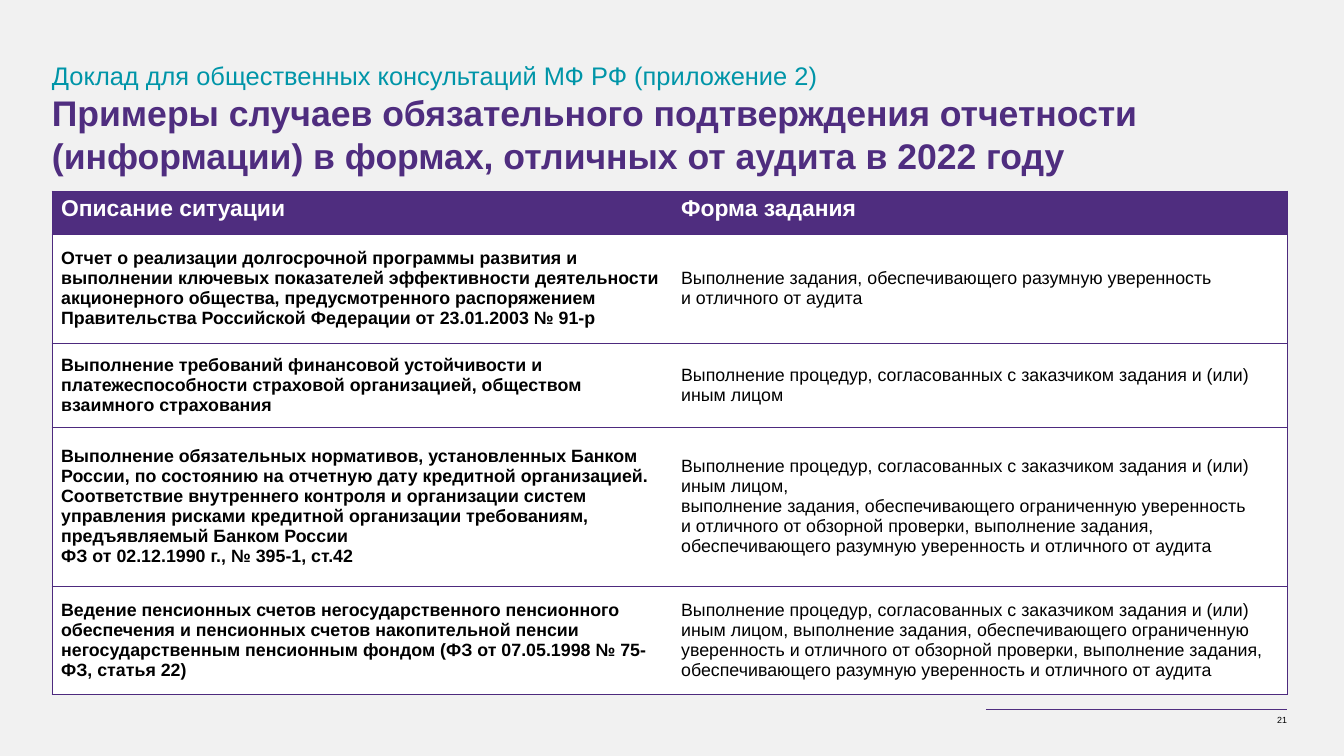
from copy import deepcopy

from lxml.etree import SubElement
from pptx import Presentation
from pptx.dml.color import RGBColor
from pptx.enum.shapes import MSO_CONNECTOR
from pptx.enum.text import MSO_ANCHOR, PP_ALIGN
from pptx.oxml import parse_xml
from pptx.oxml.ns import nsdecls, qn
from pptx.util import Pt

PX = 10000  # EMU per px
BACK = RGBColor(0xF1, 0xF1, 0xF1)
PURPLE = RGBColor(0x4F, 0x2D, 0x7F)
BORDER = RGBColor(0x4D, 0x2A, 0x7E)
TEAL = RGBColor(0x00, 0x95, 0xA8)
WHITE = RGBColor(0xFF, 0xFF, 0xFF)
BLACK = RGBColor(0, 0, 0)

LEFT, WIDTH, TABLE_TOP = 52, 1235, 191
COLS = [620, 615]
ROW_HEIGHTS = [43, 109, 84, 159, 109]

# Each cell is a list of paragraphs; "\n" is a line break
ROWS = [
    (["Описание ситуации"], ["Форма задания"]),
    (["Отчет о реализации долгосрочной программы развития и выполнении ключевых "
      "показателей эффективности деятельности акционерного общества, предусмотренного "
      "распоряжением Правительства Российской Федерации от 23.01.2003 № 91-р"],
     ["Выполнение задания, обеспечивающего разумную уверенность\nи отличного от аудита"]),
    (["Выполнение требований финансовой устойчивости и платежеспособности страховой "
      "организацией, обществом взаимного страхования"],
     ["Выполнение процедур, согласованных с заказчиком задания и (или) иным лицом"]),
    (["Выполнение обязательных нормативов, установленных Банком России, по состоянию "
      "на отчетную дату кредитной организацией.",
      "Соответствие внутреннего контроля и организации систем управления рисками "
      "кредитной организации требованиям, предъявляемый Банком России",
      "ФЗ от 02.12.1990 г., № 395-1, ст.42"],
     ["Выполнение процедур, согласованных с заказчиком задания и (или) иным лицом,",
      "выполнение задания, обеспечивающего ограниченную уверенность\nи отличного от "
      "обзорной проверки, выполнение задания, обеспечивающего разумную уверенность "
      "и отличного от аудита"]),
    (["Ведение пенсионных счетов негосударственного пенсионного обеспечения и пенсионных "
      "счетов накопительной пенсии негосударственным пенсионным фондом "
      "(ФЗ от 07.05.1998 № 75-ФЗ, статья 22)"],
     ["Выполнение процедур, согласованных с заказчиком задания и (или) иным лицом, "
      "выполнение задания, обеспечивающего ограниченную уверенность и отличного от "
      "обзорной проверки, выполнение задания, обеспечивающего разумную уверенность "
      "и отличного от аудита"]),
]


def write(p, text, size=14, color=BLACK, bold=False):
    for i, line in enumerate(text.split("\n")):
        if i:
            p.add_line_break()
            p._p[-1].append(deepcopy(r._r.rPr))
        r = p.add_run()
        r.text = line
        r.font.name = "Arial"
        r.font.size = Pt(size)
        r.font.bold = bold
        r.font.color.rgb = color


def set_borders(cell, visible):
    tcPr = cell._tc.get_or_add_tcPr()
    for i, side in enumerate("LRTB"):
        paint = (f'<a:solidFill><a:srgbClr val="{BORDER}"/></a:solidFill>'
                 if side in visible else "<a:noFill/>")
        ln = parse_xml(f'<a:ln{side} {nsdecls("a")} w="9525">{paint}</a:ln{side}>')
        tcPr.insert(i, ln)


prs = Presentation()
prs.slide_width, prs.slide_height = 1344 * PX, 756 * PX
slide = prs.slides.add_slide(prs.slide_layouts[6])
slide.background.fill.solid()
slide.background.fill.fore_color.rgb = BACK

# Title
title = slide.shapes.add_textbox(LEFT * PX, 47 * PX, WIDTH * PX, 115 * PX)
tf = title.text_frame
tf.word_wrap = True
tf.margin_left = tf.margin_right = tf.margin_top = tf.margin_bottom = 0
p = tf.paragraphs[0]
p.line_spacing = Pt(34)
write(p, "Доклад для общественных консультаций МФ РФ (приложение 2)", size=20, color=TEAL)
p.add_line_break()
write(p, "Примеры случаев обязательного подтверждения отчетности (информации) "
         "в формах, отличных от аудита в 2022 году", size=28, color=PURPLE, bold=True)

# Table
frame = slide.shapes.add_table(len(ROWS), len(COLS), LEFT * PX, TABLE_TOP * PX,
                               WIDTH * PX, sum(ROW_HEIGHTS) * PX)
table = frame.table
for col, width in zip(table.columns, COLS):
    col.width = width * PX
for i, (row, height) in enumerate(zip(ROWS, ROW_HEIGHTS)):
    table.rows[i].height = height * PX
    header = i == 0
    for j, paragraphs in enumerate(row):
        cell = table.cell(i, j)
        cell.fill.solid()
        cell.fill.fore_color.rgb = PURPLE if header else WHITE
        cell.vertical_anchor = MSO_ANCHOR.TOP if header else MSO_ANCHOR.MIDDLE
        set_borders(cell, "LTB" if j == 0 else "RTB")
        tf = cell.text_frame
        for k, text in enumerate(paragraphs):
            p = tf.add_paragraph() if k else tf.paragraphs[0]
            write(p, text, size=18 if header else 14,
                  color=WHITE if header else BLACK, bold=header or j == 0)

# Footer rule and page number
rule = slide.shapes.add_connector(MSO_CONNECTOR.STRAIGHT, 986 * PX, 709 * PX,
                                  1287 * PX, 709 * PX)
rule.line.color.rgb = PURPLE
rule.line.width = Pt(0.75)
SubElement(rule._element.spPr, qn("a:effectLst"))

number = slide.shapes.add_textbox(1276 * PX, 710 * PX, 11 * PX, 20 * PX)
tf = number.text_frame
tf.word_wrap = False
tf.margin_left = tf.margin_right = 0
p = tf.paragraphs[0]
p.alignment = PP_ALIGN.RIGHT
write(p, "21", size=7)

prs.save("out.pptx")
